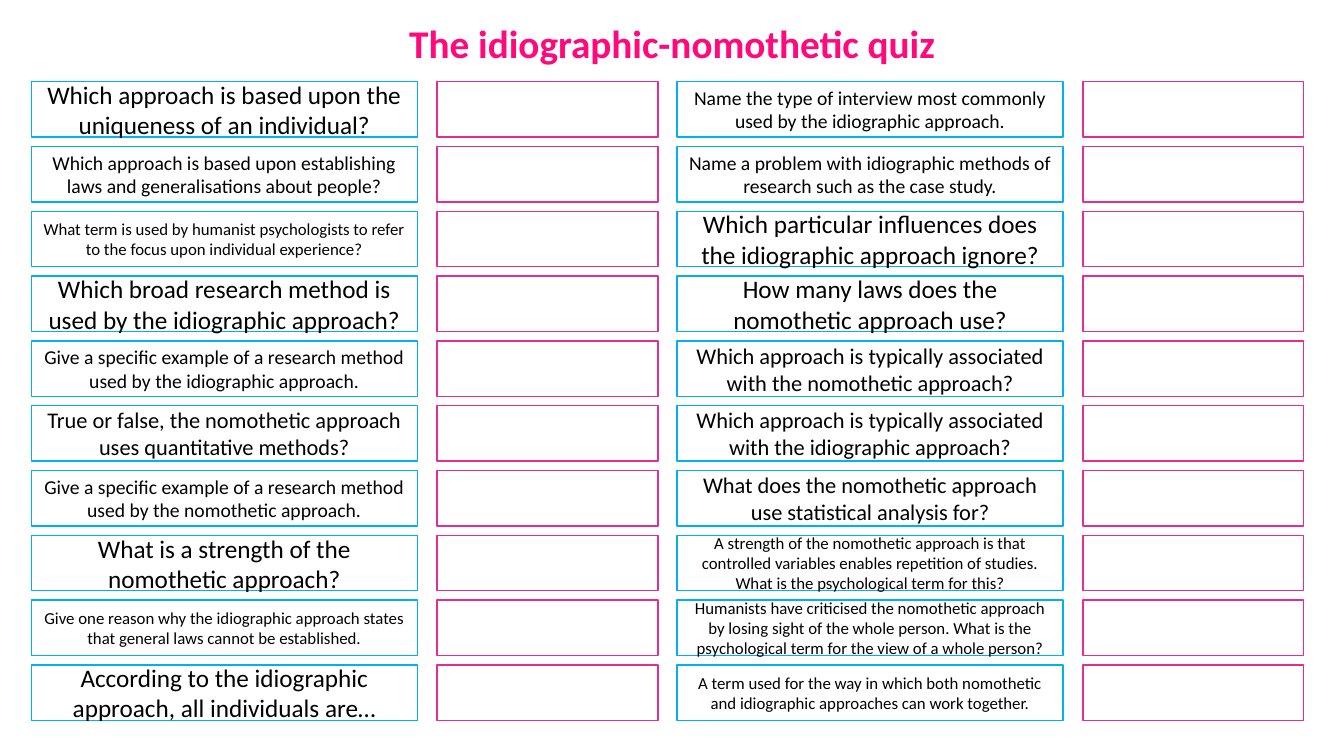
from pptx import Presentation
from pptx.dml.color import RGBColor
from pptx.enum.shapes import MSO_SHAPE
from pptx.enum.text import MSO_ANCHOR, PP_ALIGN
from pptx.util import Inches, Pt

RECTANGLE = MSO_SHAPE.RECTANGLE
CENTER = PP_ALIGN.CENTER
TOP = MSO_ANCHOR.TOP

WHITE = RGBColor(0xFF, 0xFF, 0xFF)
BLACK = RGBColor(0x00, 0x00, 0x00)
QUESTION_BLUE = RGBColor(0x00, 0xB0, 0xF0)
ANSWER_PINK = RGBColor(0xE3, 0x2D, 0x91)
TITLE_PINK = RGBColor(0xFF, 0x09, 0x7C)
FONT = "Calibri"

SLIDE_WIDTH, SLIDE_HEIGHT = 13.33, 7.5
GRID_LEFT, GRID_TOP = 0.31, 0.81
HALF_PITCH = 6.405
ROW_PITCH = 0.643
ANSWER_OFFSET = 4.025
QUESTION_WIDTH, ANSWER_WIDTH, BOX_HEIGHT = 3.83, 2.19, 0.55

# Each half of the quiz: (question, text size)
QUIZ_HALVES = [
    [
        ("Which approach is based upon the uniqueness of an individual?", 18),
        ("Which approach is based upon establishing laws and generalisations about people?", 14),
        ("What term is used by humanist psychologists to refer to the focus upon individual experience?", 12),
        ("Which broad research method is used by the idiographic approach?", 18),
        ("Give a specific example of a research method used by the idiographic approach.", 14),
        ("True or false, the nomothetic approach uses quantitative methods?", 16),
        ("Give a specific example of a research method used by the nomothetic approach.", 14),
        ("What is a strength of the nomothetic approach?", 18),
        ("Give one reason why the idiographic approach states that general laws cannot be established.", 12),
        ("According to the idiographic approach, all individuals are…", 18),
    ],
    [
        ("Name the type of interview most commonly used by the idiographic approach.", 14),
        ("Name a problem with idiographic methods of research such as the case study.", 14),
        ("Which particular influences does the idiographic approach ignore?", 18),
        ("How many laws does the nomothetic approach use?", 18),
        ("Which approach is typically associated with the nomothetic approach?", 16),
        ("Which approach is typically associated with the idiographic approach?", 16),
        ("What does the nomothetic approach use statistical analysis for?", 16),
        ("A strength of the nomothetic approach is that controlled variables enables "
         "repetition of studies. What is the psychological term for this?", 12),
        ("Humanists have criticised the nomothetic approach by losing sight of the whole "
         "person. What is the psychological term for the view of a whole person?", 12),
        ("A term used for the way in which both nomothetic and idiographic approaches "
         "can work together.", 12),
    ],
]


def write_centred(frame, text, size, color, bold=False):
    frame.text = text
    paragraph = frame.paragraphs[0]
    paragraph.alignment = CENTER
    font = paragraph.runs[0].font
    font.name = FONT
    font.size = Pt(size)
    font.bold = bold
    font.color.rgb = color


def add_title(slide, text):
    title = slide.shapes.title
    title.left, title.top = Inches(0), Inches(0.14)
    title.width, title.height = Inches(SLIDE_WIDTH), Inches(0.57)
    title.text_frame.vertical_anchor = TOP
    write_centred(title.text_frame, text, 28, TITLE_PINK, bold=True)


def add_box(slide, left, top, width, outline):
    box = slide.shapes.add_shape(
        RECTANGLE, Inches(left), Inches(top), Inches(width), Inches(BOX_HEIGHT))
    box.shadow.inherit = False
    box.fill.solid()
    box.fill.fore_color.rgb = WHITE
    box.line.color.rgb = outline
    box.line.width = Pt(1)
    return box


def add_quiz_row(slide, half, row, question, size):
    """Add a question box with its empty answer box to the right."""
    left = GRID_LEFT + half * HALF_PITCH
    top = GRID_TOP + row * ROW_PITCH
    question_box = add_box(slide, left, top, QUESTION_WIDTH, QUESTION_BLUE)
    write_centred(question_box.text_frame, question, size, BLACK)
    add_box(slide, left + ANSWER_OFFSET, top, ANSWER_WIDTH, ANSWER_PINK)


def main():
    deck = Presentation()
    deck.slide_width = Inches(SLIDE_WIDTH)
    deck.slide_height = Inches(SLIDE_HEIGHT)
    slide = deck.slides.add_slide(deck.slide_layouts.get_by_name("Title Only"))
    add_title(slide, "The idiographic-nomothetic quiz")
    for half, questions in enumerate(QUIZ_HALVES):
        for row, (question, size) in enumerate(questions):
            add_quiz_row(slide, half, row, question, size)
    deck.save("out.pptx")


if __name__ == "__main__":
    main()
